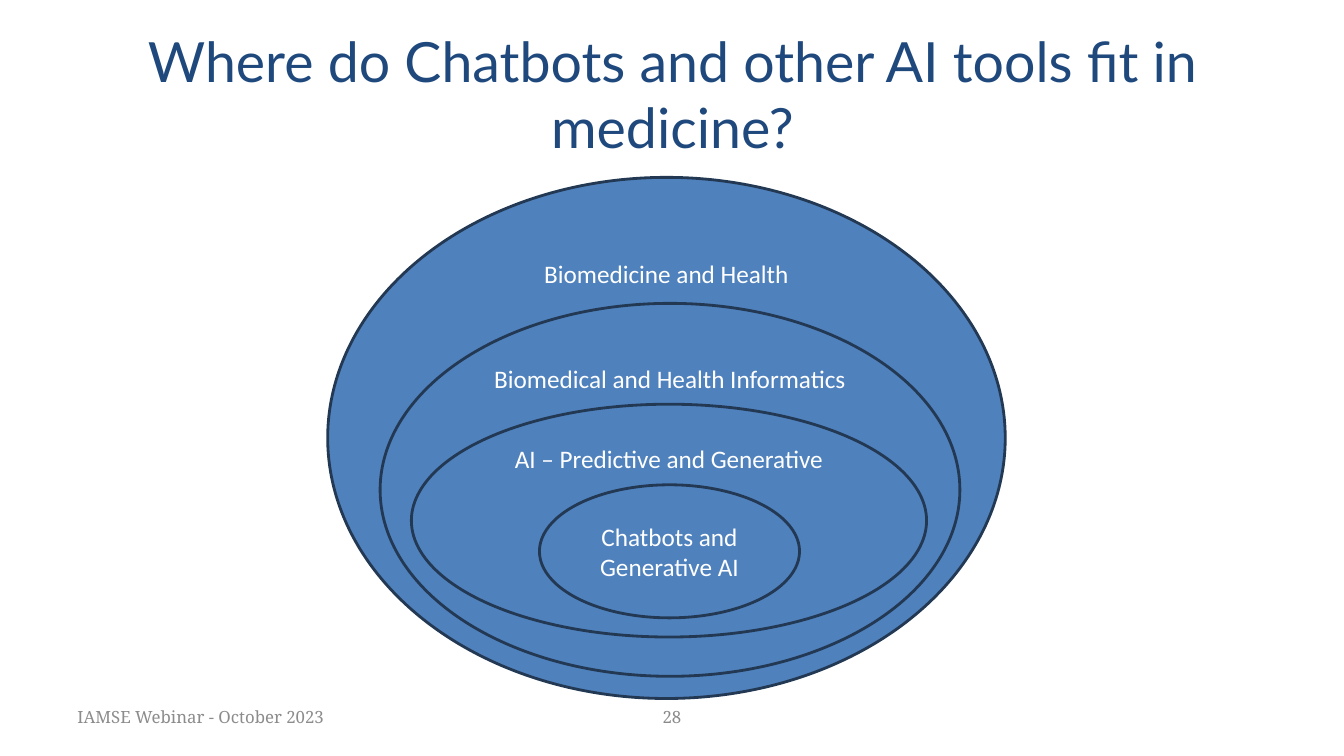
from pptx import Presentation
from pptx.dml.color import RGBColor
from pptx.enum.shapes import MSO_SHAPE
from pptx.enum.text import MSO_ANCHOR, PP_ALIGN
from pptx.util import Inches, Pt

FILL, OUTLINE, WHITE = "4F81BD", "233953", "FFFFFF"
TOP, MIDDLE = MSO_ANCHOR.TOP, MSO_ANCHOR.MIDDLE
LEFT, CENTER = PP_ALIGN.LEFT, PP_ALIGN.CENTER

# Nested fields, outermost first: label, (left, top, width, height), anchor
FIELDS = [
    ("Biomedicine and Health", (3.25, 1.76, 6.72, 5.17), TOP),
    ("Biomedical and Health Informatics", (3.77, 3.01, 5.75, 3.7), TOP),
    ("AI – Predictive and Generative", (4.08, 4.01, 5.11, 2.31), TOP),
    ("Chatbots and Generative AI", (5.35, 4.81, 2.58, 1.32), MIDDLE),
]

# Text, (left, top, width, height), alignment, font, size, colour
TEXTS = [
    ("Where do Chatbots and other AI tools fit in medicine?",
     (0.67, 0.3, 12, 1.25), CENTER, "Lato", 39.6, "1F497D"),
    ("28", (5.33, 6.92, 2.67, 0.38), CENTER, "Noto Serif", 12, "898989"),
    ("IAMSE Webinar - October 2023",
     (0.67, 6.92, 4.5, 0.38), LEFT, "Noto Serif", 12, "8C8C8C"),
]


def rgb(value):
    return RGBColor.from_string(value)


def write(shape, text, anchor, align, font, size, color):
    tf = shape.text_frame
    tf.word_wrap = True
    tf.vertical_anchor = anchor
    p = tf.paragraphs[0]
    p.alignment = align
    r = p.add_run()
    r.text = text
    r.font.name = font
    r.font.size = Pt(size)
    r.font.color.rgb = rgb(color)


def add_field(s, label, box, anchor):
    sp = s.shapes.add_shape(MSO_SHAPE.OVAL, *map(Inches, box))
    sp.shadow.inherit = False
    sp.fill.solid()
    sp.fill.fore_color.rgb = rgb(FILL)
    sp.line.color.rgb = rgb(OUTLINE)
    sp.line.width = Pt(2)
    write(sp, label, anchor, CENTER, "Calibri", 18, WHITE)


def main():
    prs = Presentation()
    prs.slide_width, prs.slide_height = Inches(13.33), Inches(7.5)
    s = prs.slides.add_slide(prs.slide_layouts[6])
    for field in FIELDS:
        add_field(s, *field)
    for text, box, *style in TEXTS:
        write(s.shapes.add_textbox(*map(Inches, box)), text, MIDDLE, *style)
    prs.save("out.pptx")


if __name__ == "__main__":
    main()
